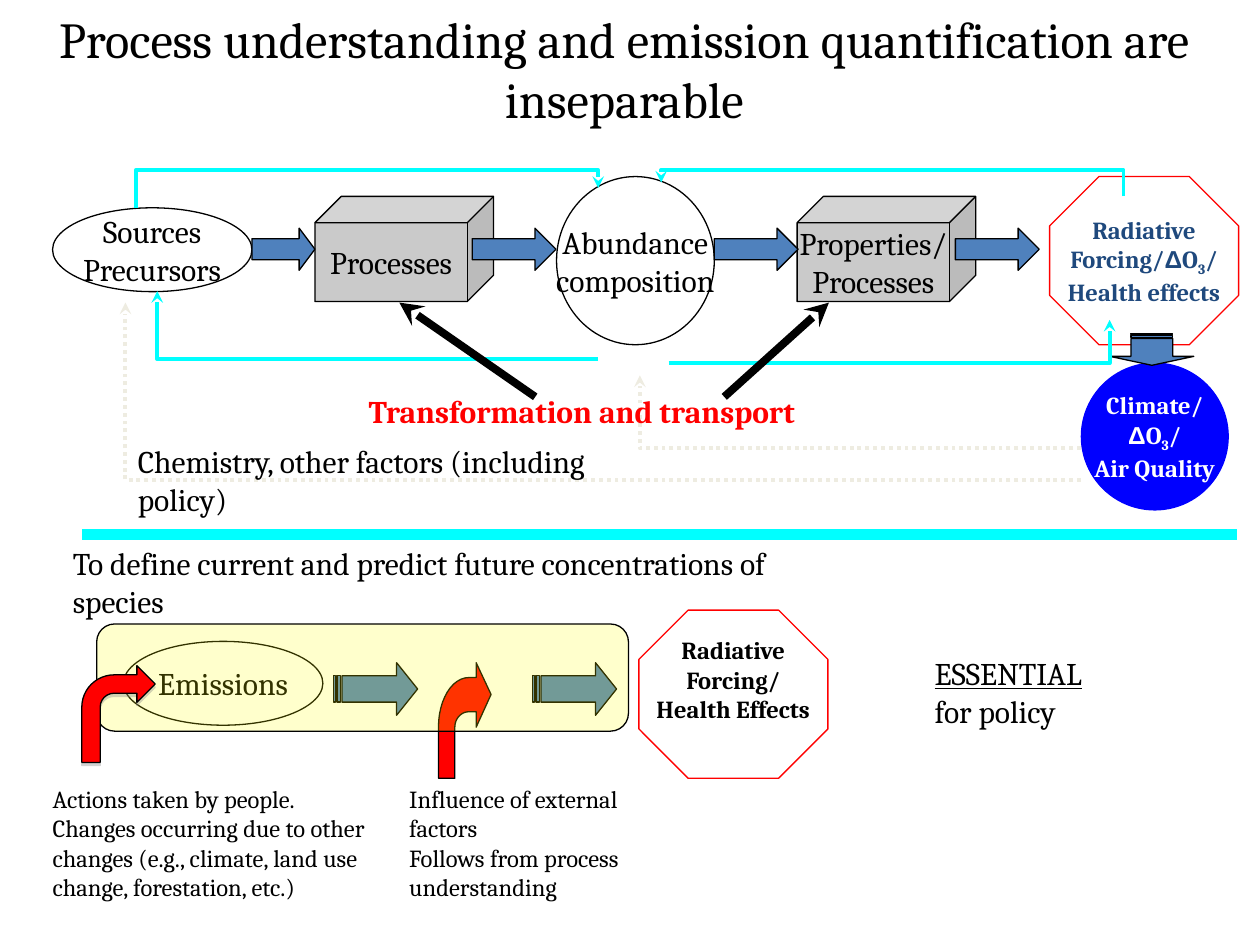
from dataclasses import dataclass
from math import cos, pi, sin

from lxml import etree
from pptx import Presentation
from pptx.dml.color import RGBColor
from pptx.enum.dml import MSO_LINE
from pptx.enum.shapes import MSO_CONNECTOR, MSO_SHAPE
from pptx.enum.text import MSO_ANCHOR, PP_ALIGN
from pptx.oxml.ns import qn
from pptx.util import Cm, Pt

ELLIPSE, CUBE, OCTAGON = MSO_SHAPE.OVAL, MSO_SHAPE.CUBE, MSO_SHAPE.OCTAGON
ARROW, STRIPED = MSO_SHAPE.RIGHT_ARROW, MSO_SHAPE.STRIPED_RIGHT_ARROW
BENT, ROUNDED = MSO_SHAPE.BENT_ARROW, MSO_SHAPE.ROUNDED_RECTANGLE
STRAIGHT, DOTTED = MSO_CONNECTOR.STRAIGHT, MSO_LINE.ROUND_DOT
LEFT, CENTER = PP_ALIGN.LEFT, PP_ALIGN.CENTER
TOP, MIDDLE = MSO_ANCHOR.TOP, MSO_ANCHOR.MIDDLE


@dataclass(frozen=True)
class Theme:
    font: str = "Cambria"
    symbol_font: str = "Arial"
    black: str = "000000"
    white: str = "FFFFFF"
    red: str = "FF0000"
    blue: str = "0000FF"
    steel: str = "4F81BD"
    navy: str = "1F497D"
    grey: str = "969696"
    shadow: str = "808080"
    cyan: str = "00FFFF"
    faint: str = "EEECE1"
    yellow: str = "FFFF00"
    title: float = 28.8
    body: float = 18
    small: float = 14
    outline: float = 0.75
    loop: float = 2.25


THEME = Theme()
OZONE = [("Δ", {"name": THEME.symbol_font}), ("O", {}), ("3", {"baseline": "-25000"}), ("/", {})]


@dataclass(frozen=True)
class Box:
    left: float
    top: float
    width: float
    height: float

    def point(self, x, y):
        return Cm(self.left + x), Cm(self.top + y)

    def area(self, x, y, width, height):
        return *self.point(x, y), Cm(width), Cm(height)


def write(frame, paragraphs, size=THEME.body, color=THEME.black, align=LEFT, **font):
    for index, content in enumerate(paragraphs):
        paragraph = frame.paragraphs[0] if index == 0 else frame.add_paragraph()
        paragraph.alignment = align
        runs = [(content, {})] if isinstance(content, str) else content
        for text, changes in runs:
            run = paragraph.add_run()
            run.text = text
            run.font.color.rgb = RGBColor.from_string(color)
            values = {"name": THEME.font, "size": Pt(size), **font, **changes}
            baseline = values.pop("baseline", None)
            for key, value in values.items():
                setattr(run.font, key, value)
            if baseline:
                run.font._element.set("baseline", baseline)


def add_label(slide, area, paragraphs, anchor=TOP, **font):
    frame = slide.shapes.add_textbox(*area).text_frame
    for key, value in {"word_wrap": True, "vertical_anchor": anchor}.items():
        setattr(frame, key, value)
    write(frame, paragraphs, **font)


def paint(shape, fill=None, line=THEME.black, width=THEME.outline, alpha=None):
    shape.shadow.inherit = False
    shape.line.color.rgb = RGBColor.from_string(line)
    shape.line.width = Pt(width)
    if fill is None:
        shape.fill.background()
        return
    shape.fill.solid()
    shape.fill.fore_color.rgb = RGBColor.from_string(fill)
    if alpha:
        color = shape._element.spPr.find(qn("a:solidFill"))[0]
        etree.SubElement(color, qn("a:alpha"), val=str(alpha * 1000))


def add_node(slide, kind, area, paragraphs=(), adjust=(), font=None, **style):
    node = slide.shapes.add_shape(kind, *area)
    for index, value in enumerate(adjust):
        node.adjustments[index] = value
    paint(node, **style)
    frame = node.text_frame
    for key, value in {"word_wrap": False, "vertical_anchor": MIDDLE}.items():
        setattr(frame, key, value)
    write(frame, paragraphs, align=CENTER, **(font or {}))
    return node


def add_outline(slide, box, points, close, **style):
    start, *rest = [box.point(*point) for point in points]
    builder = slide.shapes.build_freeform(*start)
    builder.add_line_segments(rest, close=close)
    outline = builder.convert_to_shape()
    paint(outline, **style)
    return outline


def add_stealth_tip(line):
    outline = line._element.spPr.find(qn("a:ln"))
    etree.SubElement(outline, qn("a:tailEnd"), type="stealth")


def add_line(slide, start, end, color, width):
    line = slide.shapes.add_connector(STRAIGHT, *start, *end)
    line.line.color.rgb = RGBColor.from_string(color)
    line.line.width = Pt(width)
    etree.SubElement(line._element.spPr, qn("a:effectLst"))
    return line


def add_drop_shadow(shape):
    effects = shape._element.spPr.find(qn("a:effectLst"))
    shadow = etree.SubElement(effects, qn("a:outerShdw"), dist=str(Pt(1.8)), dir="5400000", rotWithShape="0")
    color = etree.SubElement(shadow, qn("a:srgbClr"), val=THEME.shadow)
    etree.SubElement(color, qn("a:alpha"), val="35000")


def arc(x, y, rx, ry, start, end, steps=12):
    angles = [start + (end - start) * step / steps for step in range(steps + 1)]
    return [(x + rx * cos(angle), y - ry * sin(angle)) for angle in angles]


def build_title(slide, box):
    add_label(slide, box.area(0, 0, box.width, box.height),
              ["Process understanding and emission quantification are inseparable"],
              anchor=MIDDLE, size=THEME.title, align=CENTER)


def build_chain(slide, box):
    cube = {"fill": THEME.grey, "alpha": 50}
    bold = {"size": THEME.small, "bold": True}
    add_node(slide, CUBE, box.area(5.29, 0.53, 3.6, 2.12), ["Processes"], **cube)
    add_node(slide, ELLIPSE, box.area(0, 0.76, 4.02, 1.69), ["Sources", "Precursors"])
    add_node(slide, ELLIPSE, box.area(10.16, 0.13, 3.18, 3.39), ["Abundance", "composition"])
    add_node(slide, OCTAGON, box.area(20.1, 0.13, 3.81, 3.39),
             ["Radiative", [("Forcing/", {}), *OZONE], "Health effects"],
             adjust=[0.293], font={**bold, "color": THEME.navy}, line=THEME.red)
    add_node(slide, CUBE, box.area(15.01, 0.53, 3.6, 2.12), ["Properties/", "Processes"], **cube)
    for x, width, head in [(4.02, 1.27, 0.375), (8.46, 1.69, 0.5), (13.34, 1.69, 0.5), (18.2, 1.69, 0.5)]:
        add_node(slide, ARROW, box.area(x, 1.17, width, 0.85), adjust=[0.5, head], fill=THEME.steel)
    add_node(slide, ELLIPSE, box.area(20.74, 3.89, 2.96, 2.96),
             ["Climate/", OZONE, "Air Quality"],
             font={**bold, "color": THEME.white}, fill=THEME.blue, line=THEME.blue)
    down = add_node(slide, STRIPED, box.area(21.84, 2.77, 0.64, 1.69), adjust=[0.5, 0.28], fill=THEME.steel)
    down.rotation = 90


def build_feedbacks(slide, box):
    loops = [
        [(11, 3.81), (2.11, 3.81), (2.11, 2.44)],
        [(12.42, 3.89), (21.31, 3.89), (21.31, 3.02)],
        [(1.68, 0.76), (1.68, 0), (11, 0), (11, 0.36)],
        [(21.59, 0.53), (21.59, 0), (12.27, 0), (12.27, 0.25)],
    ]
    weak_loops = [
        [(20.73, 6.25), (1.47, 6.25), (1.47, 2.67)],
        [(20.73, 5.61), (11.84, 5.61), (11.84, 4.14)],
    ]
    for color, dash, routes in [(THEME.cyan, None, loops), (THEME.faint, DOTTED, weak_loops)]:
        for route in routes:
            loop = add_outline(slide, box, route, False, line=color, width=THEME.loop)
            if dash:
                loop.line.dash_style = dash
            add_stealth_tip(loop)


def build_influences(slide, box):
    add_label(slide, box.area(1.47, 5.36, 11.38, 1.02), ["Chemistry, other factors (including policy)"])
    for start, end in [((9.73, 4.57), (6.99, 2.67)), ((13.54, 4.57), (15.65, 2.67))]:
        add_stealth_tip(add_line(slide, box.point(*start), box.point(*end), THEME.black, 4.5))
    add_label(slide, box.area(6.12, 4.34, 11.5, 1.27), ["Transformation and transport"],
              color=THEME.red, bold=True)


def build_policy(slide, box):
    add_line(slide, box.point(0.84, -0.08), box.point(box.width, -0.08), THEME.cyan, 6)
    add_label(slide, box.area(0.41, 0, 16.1, 1.02),
              ["To define current and predict future concentrations of species"])
    add_label(slide, box.area(17.78, 2.21, 5.03, 2.29),
              [[("ESSENTIAL", {"underline": True})], "for policy"])
    add_node(slide, ELLIPSE, box.area(1.68, 2.08, 4.02, 1.69), ["Emissions"])
    for x in (5.92, 9.93):
        add_node(slide, STRIPED, box.area(x, 2.51, 1.69, 1.06), adjust=[0.5, 0.4], fill=THEME.steel)

    external = Box(box.left + 8.03, box.top + 2.51, 1.06, 2.33)
    outer = arc(0.61, 1.3, 0.61, 1, pi / 2, pi)
    inner = arc(0.61, 1.3, 0.28, 0.31, pi, pi / 2)
    add_outline(slide, external,
                [(1.06, 0.64), (0.76, 0), (0.76, 0.3), *outer, (0, 2.33), (0.33, 2.33), *inner,
                 (0.76, 0.99), (0.76, 1.3)], True, fill=THEME.red)

    health = add_node(slide, OCTAGON, box.area(12.07, 1.45, 3.81, 3.39),
                      ["Radiative", "Forcing/", "Health Effects"], adjust=[0.293],
                      font={"size": THEME.small, "bold": True}, line=THEME.red)
    health.text_frame.margin_bottom = Cm(0.72)
    add_node(slide, ROUNDED, box.area(1.14, 1.73, 10.72, 2.16), adjust=[0.167], fill=THEME.yellow, alpha=20)
    action = add_node(slide, BENT, box.area(0.84, 2.57, 1.48, 1.95),
                      adjust=[0.25, 0.25, 0.25, 0.44], fill=THEME.red)
    add_drop_shadow(action)
    add_label(slide, box.area(7.19, 4.83, 5.92, 2.64),
              ["Influence of external factors", "Follows from process understanding"], size=THEME.small)
    add_label(slide, box.area(0, 4.83, 7.19, 2.64),
              ["Actions taken by people.",
               "Changes occurring due to other changes (e.g., climate, land use change, forestation, etc.)"],
              size=THEME.small)


def main():
    deck = Presentation()
    deck.slide_width, deck.slide_height = Cm(25.4), Cm(19.05)
    slide = deck.slides.add_slide(deck.slide_layouts[6])
    process_box = Box(1.06, 3.43, 23.9, 6.85)
    build_title(slide, Box(0.2, 0.64, 24.77, 1.47))
    build_chain(slide, process_box)
    build_feedbacks(slide, process_box)
    build_influences(slide, process_box)
    build_policy(slide, Box(0.81, 10.85, 24.13, 7.47))
    deck.save("out.pptx")


if __name__ == "__main__":
    main()
